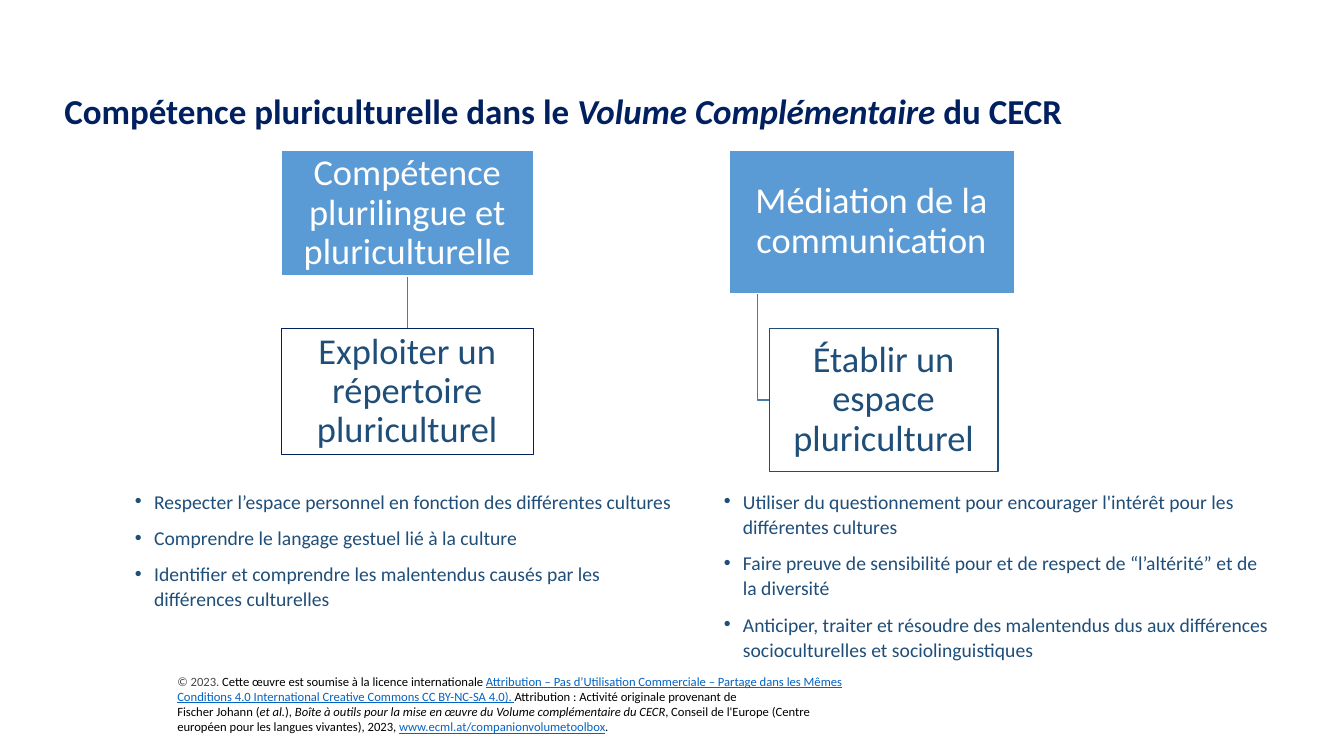
"""Build the slide on pluricultural competence in the CEFR Companion Volume."""
from lxml import etree
from pptx import Presentation
from pptx.dml.color import RGBColor
from pptx.enum.shapes import MSO_CONNECTOR, MSO_SHAPE
from pptx.enum.text import MSO_ANCHOR, PP_ALIGN
from pptx.oxml.ns import qn
from pptx.util import Inches, Pt

RECTANGLE = MSO_SHAPE.RECTANGLE
STRAIGHT = MSO_CONNECTOR.STRAIGHT
MIDDLE, TOP = MSO_ANCHOR.MIDDLE, MSO_ANCHOR.TOP
CENTER = PP_ALIGN.CENTER

WHITE = RGBColor(0xFF, 0xFF, 0xFF)
BLACK = RGBColor(0x00, 0x00, 0x00)
GREY = RGBColor(0x46, 0x46, 0x46)
NAVY = RGBColor(0x00, 0x20, 0x60)
DARK_BLUE = RGBColor(0x1F, 0x4E, 0x79)
BLUE = RGBColor(0x5B, 0x9B, 0xD5)
LINE_BLUE = RGBColor(0x49, 0x7C, 0xAB)
LINK_BLUE = RGBColor(0x05, 0x63, 0xC1)

FONT = "Calibri"
SLIDE_WIDTH, SLIDE_HEIGHT = 13.33, 7.5
PARENT_TOP, CHILD_TOP, BULLETS_TOP = 1.49, 3.26, 4.79
BULLETS_WIDTH, BULLET_INDENT = 5.61, 0.19

TITLE = [
    ("Compétence pluriculturelle dans le", False),
    (" Volume Complémentaire ", True),
    ("du CECR", False),
]

LEFT = {
    "parent": ("Compétence plurilingue et pluriculturelle", 2.79, 2.5),
    "child": ("Exploiter un répertoire pluriculturel", 2.79, 2.5),
    "height": 1.25,
    "inset": 0.02,
    "outline": NAVY,
    "bullets_left": 1.24,
    "bullets": [
        "Respecter l’espace personnel en fonction des différentes cultures",
        "Comprendre le langage gestuel lié à la culture",
        "Identifier et comprendre les malentendus causés par les différences culturelles",
    ],
}
RIGHT = {
    "parent": ("Médiation de la communication", 7.23, 2.83),
    "child": ("Établir un espace pluriculturel", 7.63, 2.27),
    "height": 1.42,
    "inset": 0.05,
    "outline": DARK_BLUE,
    "bullets_left": 7.08,
    "bullets": [
        "Utiliser du questionnement pour encourager l'intérêt pour les différentes cultures",
        "Faire preuve de sensibilité pour et de respect de “l’altérité” et de la diversité",
        "Anticiper, traiter et résoudre des malentendus dus aux différences "
        "socioculturelles et sociolinguistiques",
    ],
}

PLAIN = (BLACK, False, False)
ITALIC = (BLACK, True, False)
LINK = (LINK_BLUE, False, True)
LICENCE = [
    [
        ("© 2023. ", (GREY, False, False)),
        ("Cette œuvre est soumise à la licence internationale ", PLAIN),
        ("Attribution – Pas d’Utilisation Commerciale – Partage dans les Mêmes "
         "Conditions 4.0 International Creative Commons CC BY-NC-SA 4.0). ", LINK),
        ("Attribution : Activité originale provenant de", PLAIN),
    ],
    [
        ("Fischer Johann (", PLAIN),
        ("et al.", ITALIC),
        ("), ", PLAIN),
        ("Boîte à outils pour la mise en œuvre du Volume complémentaire du CECR", ITALIC),
        (", Conseil de l'Europe (Centre européen pour les langues vivantes), 2023, ", PLAIN),
        ("www.ecml.at/companionvolumetoolbox", LINK),
        (".", PLAIN),
    ],
]


def set_font(paragraph, size, color=None, bold=None):
    paragraph.font.name = FONT
    paragraph.font.size = Pt(size)
    paragraph.font.bold = bold
    if color is not None:
        paragraph.font.color.rgb = color


def add_text_frame(slide, left, top, width, height, anchor):
    box = slide.shapes.add_textbox(*map(Inches, (left, top, width, height)))
    box.text_frame.word_wrap = True
    box.text_frame.vertical_anchor = anchor
    return box.text_frame


def paragraphs_for(frame, items):
    for index, item in enumerate(items):
        yield (frame.add_paragraph() if index else frame.paragraphs[0]), item


def add_title(slide):
    frame = add_text_frame(slide, 0.54, 0.4, 12.27, 1.45, MIDDLE)
    paragraph = frame.paragraphs[0]
    paragraph.line_spacing = 0.9
    set_font(paragraph, 25, NAVY, True)
    for text, italic in TITLE:
        run = paragraph.add_run()
        run.text = text
        run.font.italic = italic


def add_box(slide, node, top, branch, fill, outline, color):
    text, left, width = node
    shape = slide.shapes.add_shape(
        RECTANGLE, *map(Inches, (left, top, width, branch["height"])))
    shape.shadow.inherit = False
    shape.fill.solid()
    shape.fill.fore_color.rgb = fill
    shape.line.color.rgb = outline
    shape.line.width = Pt(1)
    frame = shape.text_frame
    frame.word_wrap = True
    frame.vertical_anchor = MIDDLE
    frame.margin_left = frame.margin_right = Inches(branch["inset"])
    frame.margin_top = frame.margin_bottom = Inches(0.02)
    paragraph = frame.paragraphs[0]
    paragraph.text = text
    paragraph.alignment = CENTER
    paragraph.line_spacing = 0.9
    set_font(paragraph, 26, color)


def add_straight_link(slide, branch):
    _, left, width = branch["parent"]
    center = Inches(left + width / 2)
    link = slide.shapes.add_connector(
        STRAIGHT, center, Inches(PARENT_TOP + branch["height"]), center, Inches(CHILD_TOP))
    link.line.color.rgb = LINE_BLUE
    link.line.width = Pt(1)
    etree.SubElement(link.element.spPr, qn("a:effectLst"))


def add_elbow_link(slide, branch):
    _, left, width = branch["parent"]
    trunk = Inches(left + width / 10)
    middle = Inches(CHILD_TOP + branch["height"] / 2)
    builder = slide.shapes.build_freeform(trunk, Inches(PARENT_TOP + branch["height"]))
    builder.add_line_segments(
        [(trunk, middle), (Inches(branch["child"][1]), middle)], close=False)
    link = builder.convert_to_shape()
    link.shadow.inherit = False
    link.fill.background()
    link.line.color.rgb = LINE_BLUE
    link.line.width = Pt(1)


def add_bullets(slide, branch):
    rows = branch["bullets"]
    frame = add_text_frame(
        slide, branch["bullets_left"], BULLETS_TOP, BULLETS_WIDTH, 1.83, TOP)
    for paragraph, text in paragraphs_for(frame, rows):
        paragraph.text = text
        paragraph.line_spacing = 1.07
        paragraph.space_after = Pt(8)
        properties = paragraph._p.get_or_add_pPr()
        properties.set("marL", str(Inches(BULLET_INDENT)))
        properties.set("indent", str(-Inches(BULLET_INDENT)))
        etree.SubElement(properties, qn("a:buFont"), typeface="Arial")
        etree.SubElement(properties, qn("a:buChar"), char="•")
        set_font(paragraph, 14, DARK_BLUE)


def add_licence(slide):
    frame = add_text_frame(slide, 1.66, 6.63, 6.85, 0.71, MIDDLE)
    for paragraph, runs in paragraphs_for(frame, LICENCE):
        set_font(paragraph, 9)
        for text, (color, italic, underline) in runs:
            run = paragraph.add_run()
            run.text = text
            run.font.color.rgb = color
            run.font.italic = italic
            run.font.underline = underline


def main():
    presentation = Presentation()
    presentation.slide_width = Inches(SLIDE_WIDTH)
    presentation.slide_height = Inches(SLIDE_HEIGHT)
    slide = presentation.slides.add_slide(presentation.slide_layouts[6])
    add_licence(slide)
    for branch, add_link in ((LEFT, add_straight_link), (RIGHT, add_elbow_link)):
        add_link(slide, branch)
        add_box(slide, branch["parent"], PARENT_TOP, branch, BLUE, WHITE, WHITE)
        add_box(slide, branch["child"], CHILD_TOP, branch, WHITE, branch["outline"], DARK_BLUE)
        add_bullets(slide, branch)
    add_title(slide)
    presentation.save("out.pptx")


if __name__ == "__main__":
    main()
